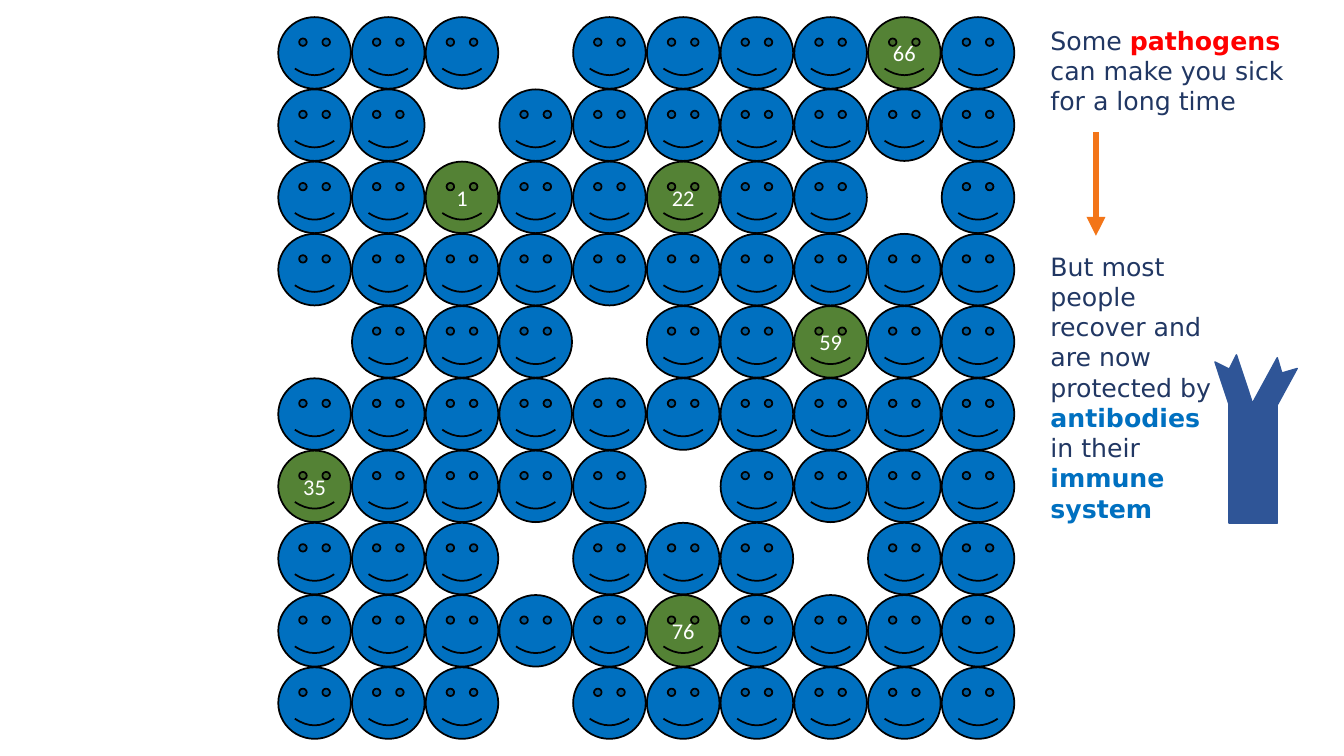
import pptx
import pptx.dml.color
import pptx.enum.shapes
import pptx.enum.text
import pptx.oxml
import pptx.util
from pptx.util import Inches

COLORS = {
    "healthy": "0070C0", "infected": "548235", "outline": "000000",
    "white": "FFFFFF", "text": "213763", "alert": "FF0000",
    "antibody": "2F5597", "arrow": "F37518",
}
SHAPES = pptx.enum.shapes.MSO_SHAPE
CROWD_SIZE = 10
FACE_WIDTH, FACE_HEIGHT = 0.72, 0.71
# (row, column) of empty places and of numbered, infected people
GAPS = {(0, 3), (1, 2), (2, 8), (4, 0), (4, 4), (6, 5), (7, 3), (7, 7), (9, 3)}
INFECTED = {(0, 8): "66", (2, 2): "1", (2, 5): "22",
            (4, 7): "59", (6, 0): "35", (8, 5): "76"}


def color(name):
    return pptx.dml.color.RGBColor.from_string(COLORS[name])


def add_filled_shape(shapes, kind, box, fill, line, line_width):
    shape = shapes.add_shape(kind, *(Inches(length) for length in box))
    shape.shadow.inherit = False
    shape.fill.solid()
    shape.fill.fore_color.rgb = color(fill)
    shape.line.color.rgb = color(line)
    shape.line.width = pptx.util.Pt(line_width)
    return shape


def add_face(shapes, box, number):
    face = add_filled_shape(shapes, SHAPES.SMILEY_FACE, box,
                            "infected" if number else "healthy", "outline", 1.25)
    if number:
        face.text_frame.vertical_anchor = pptx.enum.text.MSO_ANCHOR.MIDDLE
        para = face.text_frame.paragraphs[0]
        para.text = number
        para.alignment = pptx.enum.text.PP_ALIGN.CENTER
        para.font.name = "Calibri"
        para.font.size = pptx.util.Pt(16)
        para.font.color.rgb = color("white")


def add_crowd(page, box):
    left, top, width, height = box
    crowd = page.shapes.add_group_shape()
    column_step = (width - FACE_WIDTH) / (CROWD_SIZE - 1)
    row_step = (height - FACE_HEIGHT) / (CROWD_SIZE - 1)
    for row in range(CROWD_SIZE):
        for column in range(CROWD_SIZE):
            if (row, column) not in GAPS:
                face_box = (left + column * column_step, top + row * row_step,
                            FACE_WIDTH, FACE_HEIGHT)
                add_face(crowd.shapes, face_box, INFECTED.get((row, column)))


def add_message(page, box, spans):
    """Add a text box from (text, color name, bold) spans."""
    message = page.shapes.add_textbox(*(Inches(length) for length in box))
    message.fill.solid()
    message.fill.fore_color.rgb = color("white")
    message.text_frame.word_wrap = True
    para = message.text_frame.paragraphs[0]
    para.font.name = "DejaVu Sans"
    para.font.size = pptx.util.Pt(18)
    for text, color_name, bold in spans:
        span = para.add_run()
        span.text = text
        span.font.name = "DejaVu Sans"
        span.font.size = pptx.util.Pt(18)
        span.font.bold = bold
        span.font.color.rgb = color(color_name)


def add_antibody(page, left, top):
    """Add a Y shape: two notched arms over an upright stem."""
    antibody = page.shapes.add_group_shape()
    parts = [
        (SHAPES.NOTCHED_RIGHT_ARROW, (0, 0, 1.01, 0.45), 71.7),
        (SHAPES.NOTCHED_RIGHT_ARROW, (0.21, 0.01, 1.01, 0.45), 118.6),
        (SHAPES.RECTANGLE, (0.02, 0.54, 1.2, 0.48), 90),
    ]
    for kind, (x, y, width, height), angle in parts:
        part = add_filled_shape(antibody.shapes, kind,
                                (left + x, top + y, width, height),
                                "antibody", "antibody", 1)
        part.rotation = angle


def add_down_arrow(page, x, top, bottom):
    arrow = page.shapes.add_connector(
        pptx.enum.shapes.MSO_CONNECTOR.STRAIGHT,
        Inches(x), Inches(top), Inches(x), Inches(bottom))
    arrow.line.color.rgb = color("arrow")
    arrow.line.width = pptx.util.Pt(4.5)
    properties = arrow._element.spPr
    head = pptx.oxml.parse_xml(
        '<a:tailEnd xmlns:a="http://schemas.openxmlformats.org/drawingml/2006/main"'
        ' type="triangle"/>')
    arrow.line._get_or_add_ln().append(head)
    properties.append(pptx.oxml.parse_xml(
        '<a:effectLst xmlns:a="http://schemas.openxmlformats.org/drawingml/2006/main"/>'))


def add_story(page, left, top):
    add_message(page, (left, top + 2.24, 1.83, 2.83), [
        ("But most people recover and are now protected by ", "text", False),
        ("antibodies ", "healthy", True),
        ("in their ", "text", False),
        ("immune system", "healthy", True),
    ])
    add_antibody(page, left + 1.49, top + 3.61)
    add_message(page, (left, top, 2.6, 1.01), [
        ("Some ", "text", False),
        ("pathogens ", "alert", True),
        ("can make you sick for a long time", "text", False),
    ])
    add_down_arrow(page, left + 0.55, top + 1.11, top + 2.14)


def main():
    deck = pptx.Presentation()
    deck.slide_width, deck.slide_height = Inches(13.33), Inches(7.5)
    page = deck.slides.add_slide(deck.slide_layouts[6])
    add_crowd(page, (2.76, 0.17, 7.3, 7.16))
    add_story(page, 10.32, 0.2)
    deck.save("out.pptx")


if __name__ == "__main__":
    main()
